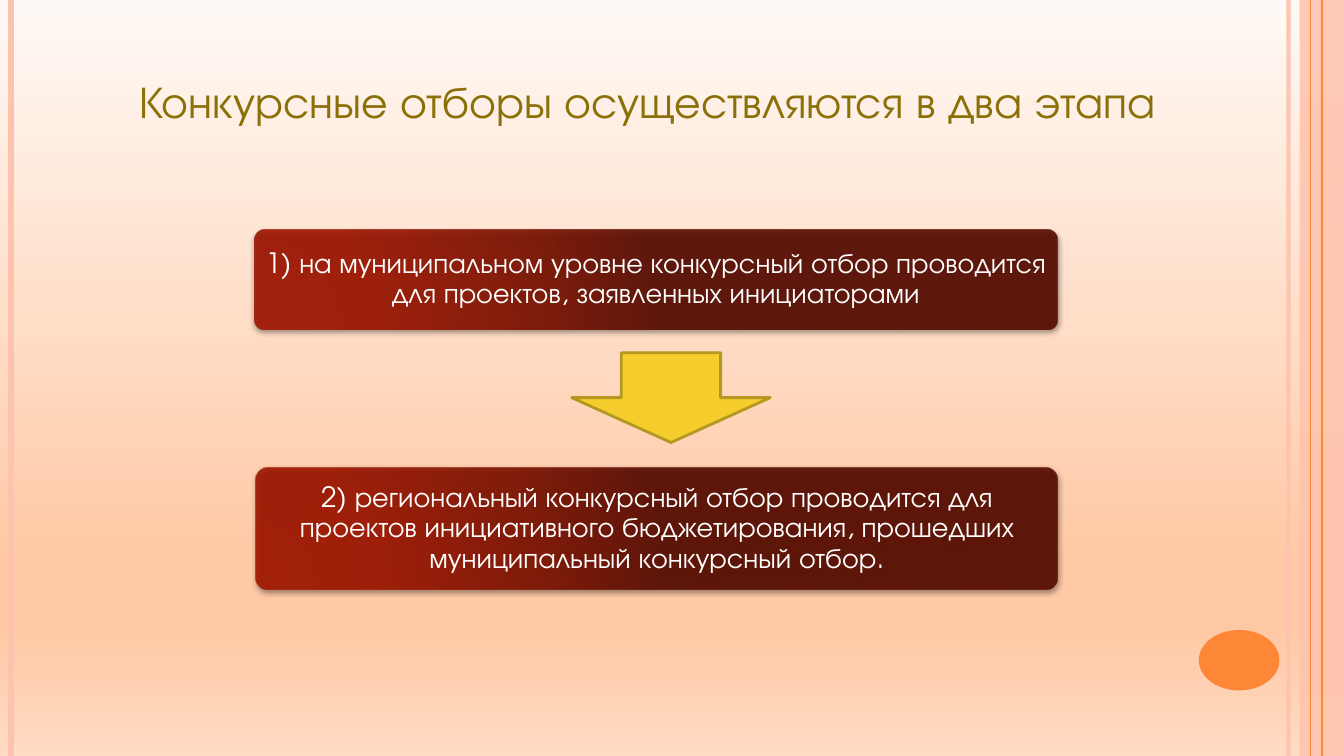
from lxml import etree
from pptx import Presentation
from pptx.dml.color import RGBColor
from pptx.enum.shapes import MSO_CONNECTOR, MSO_SHAPE
from pptx.enum.text import MSO_ANCHOR, MSO_AUTO_SIZE, PP_ALIGN
from pptx.oxml.ns import qn
from pptx.util import Inches, Pt

LINE = MSO_CONNECTOR.STRAIGHT
RECT, OVAL = MSO_SHAPE.RECTANGLE, MSO_SHAPE.OVAL
ROUND, ARROW = MSO_SHAPE.ROUNDED_RECTANGLE, MSO_SHAPE.DOWN_ARROW
LEFT, CENTER = PP_ALIGN.LEFT, PP_ALIGN.CENTER
TOP, MIDDLE = MSO_ANCHOR.TOP, MSO_ANCHOR.MIDDLE
FIT = MSO_AUTO_SIZE.SHAPE_TO_FIT_TEXT

WIDE, HIGH = 13.33, 7.5
FONT = "TeX Gyre Adventor"
COLORS = {"pink": "FEC3AE", "orange": "FE8637", "gold": "F5CD2D",
          "edge": "B59821", "title": "8A7007", "text": "FFFFFF", "shade": "000000"}
SKY = [(0, "FFF9F5"), (74, "FFC9A5"), (83, "FFC9A5"), (100, "FFDBC3")]
WINE = [(0, "A41700"), (30, "9F1600"), (75, "771100"), (100, "580C00")]
TITLE = "Конкурсные отборы осуществляются в два этапа"
# Each stage: box and wording
STAGES = [
    ((2.52, 2.28, 7.97, 0.99),
     "1) на муниципальном уровне конкурсный отбор проводится "
     "для проектов, заявленных инициаторами"),
    ((2.54, 4.64, 7.95, 1.21),
     "2) региональный конкурсный отбор проводится для проектов инициативного "
     "бюджетирования, прошедших муниципальный конкурсный отбор."),
]
# Each stripe: x, colour, width, opacity
STRIPES = [(12.78, "pink", 3, 93), (0.11, "pink", 4.5, 100),
           (13.11, "orange", 1.5, 100), (13, "orange", 0.75, 100)]


def rgb(name):
    return RGBColor.from_string(COLORS[name])


def add(node, tag, **attrs):
    return etree.SubElement(node, qn(tag), {k: str(v) for k, v in attrs.items()})


def fade(node, share):
    """Set the opacity of a solid fill, in percent."""
    add(node.find(".//" + qn("a:srgbClr")), "a:alpha", val=share * 1000)


def blend(props, stops, share=100):
    """Swap the solid fill for a gradient and return it."""
    old = props.find(qn("a:solidFill"))
    grad = etree.Element(qn("a:gradFill"), rotWithShape="1")
    props.replace(old, grad)
    row = add(grad, "a:gsLst")
    for pos, color in stops:
        stop = add(row, "a:gs", pos=pos * 1000)
        tint = add(stop, "a:srgbClr", val=color)
        if share < 100:
            add(tint, "a:alpha", val=share * 1000)
    return grad


def block(slide, kind, box, fill):
    shape = slide.shapes.add_shape(kind, *map(Inches, box))
    shape.shadow.inherit = False
    shape.fill.solid()
    shape.fill.fore_color.rgb = rgb(fill)
    shape.line.fill.background()
    return shape


def write(para, text, size, color, align):
    para.text = text
    para.alignment = align
    para.font.name = FONT
    para.font.size = Pt(size)
    para.font.color.rgb = rgb(color)


def frame(slide):
    """Background, edge stripes and page dot."""
    slide.background.fill.solid()
    grad = blend(slide.element.find(".//" + qn("p:bgPr")), SKY)
    add(grad, "a:lin", ang=90 * 60000, scaled=0)
    band = block(slide, RECT, (12.89, 0, WIDE - 12.89, HIGH), "pink")
    fade(band.element.spPr, 87)
    for x, color, width, share in STRIPES:
        line = slide.shapes.add_connector(LINE, Inches(x), 0, Inches(x), Inches(HIGH))
        line.line.color.rgb = rgb(color)
        line.line.width = Pt(width)
        fade(line.element.spPr, share)
        add(line.element.spPr, "a:effectLst")
    block(slide, OVAL, (11.89, 6.25, 0.8, 0.6), "orange")


def head(slide, box):
    title = slide.shapes.title
    title.left, title.top, title.width, title.height = map(Inches, box)
    text = title.text_frame
    text.word_wrap = False
    text.auto_size = FIT
    text.vertical_anchor = TOP
    write(text.paragraphs[0], TITLE, 32, "title", LEFT)


def stage(slide, box, words):
    """Rounded card with a wine gradient and a soft shadow."""
    card = block(slide, ROUND, box, "text")
    card.adjustments[0] = 0.1
    props = card.element.spPr
    ring = add(blend(props, WINE, 90), "a:path", path="circle")
    add(ring, "a:fillToRect", l=5000, t=100000, r=120000, b=10000)
    glow = add(props.find(qn("a:effectLst")), "a:outerShdw", blurRad=Pt(4),
               dist=Pt(1.6), dir=90 * 60000, rotWithShape=0)
    add(add(glow, "a:srgbClr", val=COLORS["shade"]), "a:alpha", val=42000)
    text = card.text_frame
    text.word_wrap = True
    text.vertical_anchor = MIDDLE
    text.margin_left = text.margin_right = Inches(0.08)
    para = text.paragraphs[0]
    write(para, words, 20, "text", CENTER)
    para.line_spacing = 0.9


def arrow(slide, box):
    shape = block(slide, ARROW, box, "gold")
    shape.line.color.rgb = rgb("edge")
    shape.line.width = Pt(2)


def main():
    deck = Presentation()
    deck.slide_width, deck.slide_height = Inches(WIDE), Inches(HIGH)
    slide = deck.slides.add_slide(deck.slide_layouts[5])
    frame(slide)
    head(slide, (1.28, 0.68, 10.36, 0.64))
    for box, words in STAGES:
        stage(slide, box, words)
    arrow(slide, (5.67, 3.5, 1.97, 0.89))
    deck.save("out.pptx")


if __name__ == "__main__":
    main()
